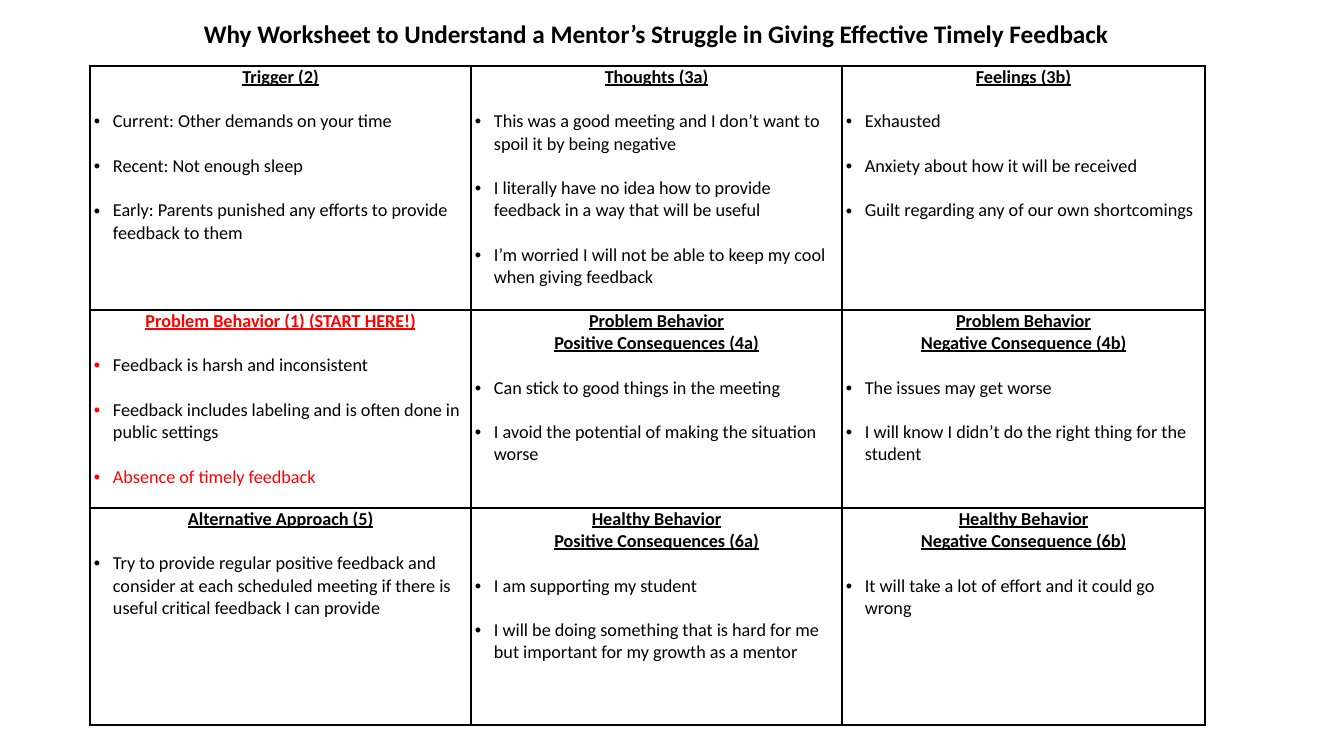
from pptx import Presentation
from pptx.dml.color import RGBColor as RGB
from pptx.enum.text import MSO_ANCHOR as ANCHOR, MSO_AUTO_SIZE as FIT, PP_ALIGN as ALIGN
from pptx.oxml import parse_xml as to_xml
from pptx.oxml.ns import nsdecls
from pptx.util import Pt

SCALE = 914400 / 100.8
FONT = "Calibri"
COLORS = {"ink": "000000", "alert": "FF0000"}
NS = nsdecls("a")

COLS = [381, 371, 363]
ROWS = [244, 198, 217]
START = "Problem Behavior (1) (START HERE!)"
LATE = "Absence of timely feedback"
ALERTS = {START, LATE}
CELLS = [
    [
        (["Trigger (2)"],
         ["Current: Other demands on your time",
          "Recent: Not enough sleep",
          "Early: Parents punished any efforts to provide feedback to them"]),
        (["Thoughts (3a)"],
         ["This was a good meeting and I don’t want to spoil it by being negative",
          "I literally have no idea how to provide feedback in a way that will be useful",
          "I’m worried I will not be able to keep my cool when giving feedback"]),
        (["Feelings (3b)"],
         ["Exhausted",
          "Anxiety about how it will be received",
          "Guilt regarding any of our own shortcomings"]),
    ],
    [
        ([START],
         ["Feedback is harsh and inconsistent",
          "Feedback includes labeling and is often done in public settings",
          LATE]),
        (["Problem Behavior", "Positive Consequences (4a)"],
         ["Can stick to good things in the meeting",
          "I avoid the potential of making the situation worse"]),
        (["Problem Behavior", "Negative Consequence (4b)"],
         ["The issues may get worse",
          "I will know I didn’t do the right thing for the student"]),
    ],
    [
        (["Alternative Approach (5)"],
         ["Try to provide regular positive feedback and consider at each scheduled "
          "meeting if there is useful critical feedback I can provide"]),
        (["Healthy Behavior", "Positive Consequences (6a)"],
         ["I am supporting my student",
          "I will be doing something that is hard for me but important for my "
          "growth as a mentor"]),
        (["Healthy Behavior", "Negative Consequence (6b)"],
         ["It will take a lot of effort and it could go wrong"]),
    ],
]


def px(n):
    return round(n * SCALE)


def style(para, size, bold=False, line=False):
    for run in para.runs:
        font = run.font
        font.name, font.size = FONT, Pt(size)
        font.bold, font.underline = bold, line
        tint = "alert" if run.text in ALERTS else "ink"
        font.color.rgb = RGB.from_string(COLORS[tint])


def add_title(slide, text):
    title = slide.shapes.title
    title.left, title.top, title.width, title.height = map(px, (76, 13, 1161, 40))
    frame = title.text_frame
    frame.text = text
    frame.auto_size = FIT.NONE
    frame.word_wrap = True
    frame.vertical_anchor = ANCHOR.MIDDLE
    para = frame.paragraphs[0]
    para.alignment = ALIGN.CENTER
    style(para, 18, bold=True)


def add_dot(para, tint):
    props = para._p.get_or_add_pPr()
    props.set("marL", str(px(19)))
    props.set("indent", str(px(-19)))
    for part in (
        f'<a:buClr {NS}><a:srgbClr val="{COLORS[tint]}"/></a:buClr>',
        f'<a:buFont {NS} typeface="Arial"/>',
        f'<a:buChar {NS} char="•"/>',
    ):
        props.append(to_xml(part))


def add_edge(cell):
    props = cell._tc.get_or_add_tcPr()
    for side in "LRTB":
        props.append(to_xml(
            f'<a:ln{side} {NS} w="{Pt(1)}"><a:solidFill>'
            f'<a:srgbClr val="{COLORS["ink"]}"/></a:solidFill></a:ln{side}>'))


def fill_cell(cell, heads, items):
    cell.margin_left = cell.margin_right = px(4)
    cell.margin_top = cell.margin_bottom = 0
    cell.vertical_anchor = ANCHOR.TOP
    add_edge(cell)
    cell.fill.background()
    frame = cell.text_frame
    frame.text = "\n".join(heads + items)
    dot = "alert" if START in heads else "ink"
    for i, para in enumerate(frame.paragraphs):
        head = i < len(heads)
        style(para, 13, bold=head, line=head)
        if head:
            para.alignment = ALIGN.CENTER
        else:
            para.alignment = ALIGN.LEFT
            para.space_before = Pt(16)
            add_dot(para, dot)


def add_grid(slide):
    area = map(px, (90, 66, sum(COLS), sum(ROWS)))
    grid = slide.shapes.add_table(len(ROWS), len(COLS), *area).table
    grid.first_row = grid.horz_banding = False
    for col, width in zip(grid.columns, COLS):
        col.width = px(width)
    for row, height, cells in zip(grid.rows, ROWS, CELLS):
        row.height = px(height)
        for cell, (heads, items) in zip(row.cells, cells):
            fill_cell(cell, heads, items)


def main():
    deck = Presentation()
    deck.slide_width, deck.slide_height = px(1344), px(756)
    slide = deck.slides.add_slide(deck.slide_layouts[5])
    add_grid(slide)
    add_title(slide, "Why Worksheet to Understand a Mentor’s Struggle in Giving "
                     "Effective Timely Feedback")
    deck.save("out.pptx")


if __name__ == "__main__":
    main()
